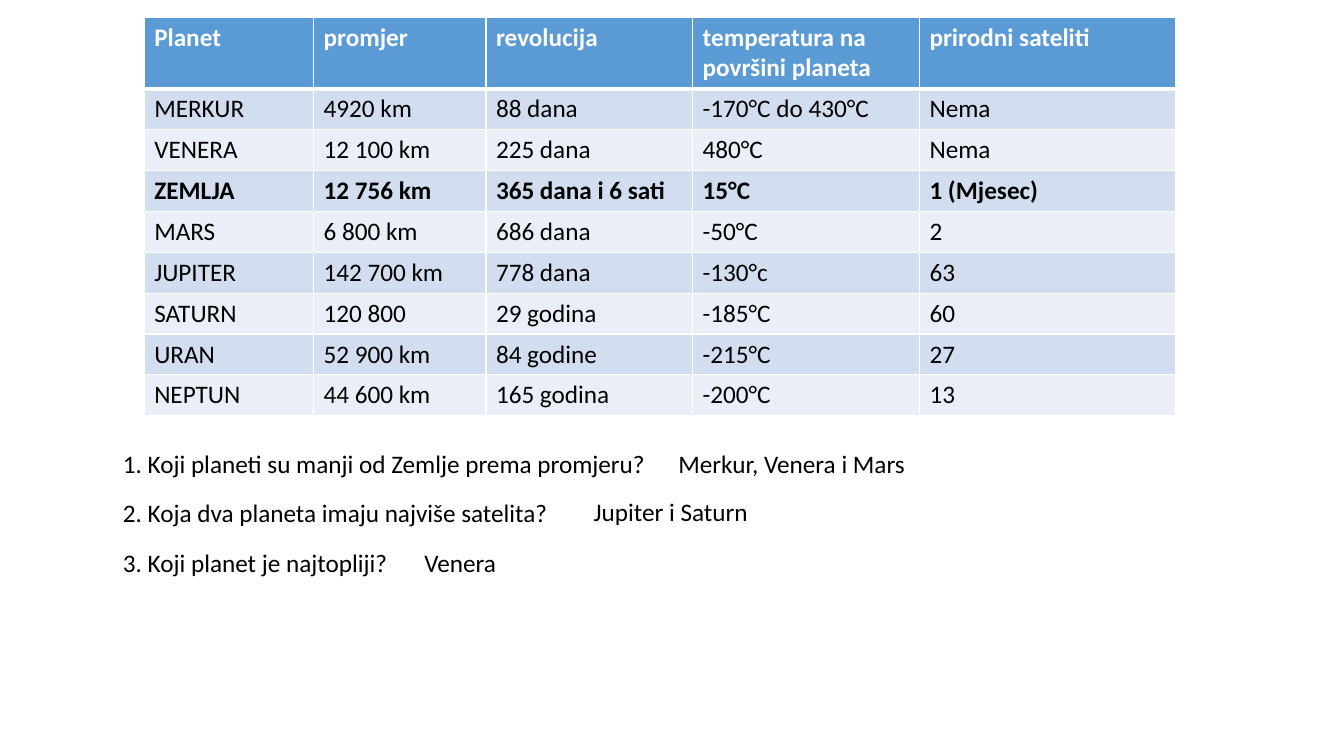
from lxml import etree
from pptx import Presentation
from pptx.dml.color import RGBColor
from pptx.enum import text
from pptx.oxml import ns
from pptx.util import Inches, Pt


def add_run(paragraph, words, color="000000", bold=False):
    run = paragraph.add_run()
    run.text = words
    run.font.name = "Calibri"
    run.font.size = Pt(18)
    run.font.bold = bold
    run.font.color.rgb = RGBColor.from_string(color)


def add_border(cell, side, points, color="FFFFFF"):
    line = etree.SubElement(cell._tc.get_or_add_tcPr(), ns.qn(f"a:ln{side}"), w=str(Pt(points)))
    fill = etree.SubElement(line, ns.qn("a:solidFill"))
    etree.SubElement(fill, ns.qn("a:srgbClr"), val=color)


prs = Presentation()
prs.slide_width, prs.slide_height = Inches(13.33), Inches(7.5)
slide = prs.slides.add_slide(prs.slide_layouts[6])

# Planet table
planet_rows = [
    ("Planet", "promjer", "revolucija", "temperatura na površini planeta", "prirodni sateliti"),
    ("MERKUR", "4920 km", "88 dana", "-170°C do 430°C", "Nema"),
    ("VENERA", "12 100 km", "225 dana", "480°C", "Nema"),
    ("ZEMLJA", "12 756 km", "365 dana i 6 sati", "15°C", "1 (Mjesec)"),
    ("MARS", "6 800 km", "686 dana", "-50°C", "2"),
    ("JUPITER", "142 700 km", "778 dana", "-130°c", "63"),
    ("SATURN", "120 800", "29 godina", "-185°C", "60"),
    ("URAN", "52 900 km", "84 godine", "-215°C", "27"),
    ("NEPTUN", "44 600 km", "165 godina", "-200°C", "13"),
]
column_widths = [1.68, 1.71, 2.05, 2.25, 2.54]
planets = slide.shapes.add_table(
    len(planet_rows), len(column_widths),
    Inches(1.43), Inches(0.17), Inches(sum(column_widths)), Inches(3.94)).table
for column, width in zip(planets.columns, column_widths):
    column.width = Inches(width)

for r, values in enumerate(planet_rows):
    header = r == 0
    planets.rows[r].height = Inches(0.71 if header else 0.405)
    band = "5B9BD5" if header else ("EAEFF7", "D2DEEF")[r % 2]
    for c, value in enumerate(values):
        cell = planets.cell(r, c)
        add_run(cell.text_frame.paragraphs[0], value,
                "FFFFFF" if header else "000000", header or values[0] == "ZEMLJA")
        # Thick line between the header and the planets
        for side, points in (("L", 1), ("R", 1), ("T", 3 if r == 1 else 1), ("B", 3 if header else 1)):
            add_border(cell, side, points)
        cell.fill.solid()
        cell.fill.fore_color.rgb = RGBColor.from_string(band)

# Questions and answers: left, top, width, wrap, words
quiz = [
    (1.12, 4.4, 5.5, False, "1. Koji planeti su manji od Zemlje prema promjeru?"),
    (6.63, 4.4, 3.66, True, "Merkur, Venera i Mars"),
    (1.12, 4.88, 4.46, False, "2. Koja dva planeta imaju najviše satelita?"),
    (5.79, 4.87, 1.75, False, "Jupiter i Saturn"),
    (1.12, 5.38, 2.85, False, "3. Koji planet je najtopliji?"),
    (4.11, 5.38, 0.92, False, "Venera"),
]
for left, top, width, wrap, words in quiz:
    frame = slide.shapes.add_textbox(Inches(left), Inches(top), Inches(width), Inches(0.4)).text_frame
    frame.word_wrap = wrap
    frame.auto_size = text.MSO_AUTO_SIZE.SHAPE_TO_FIT_TEXT
    add_run(frame.paragraphs[0], words)

prs.save("out.pptx")
